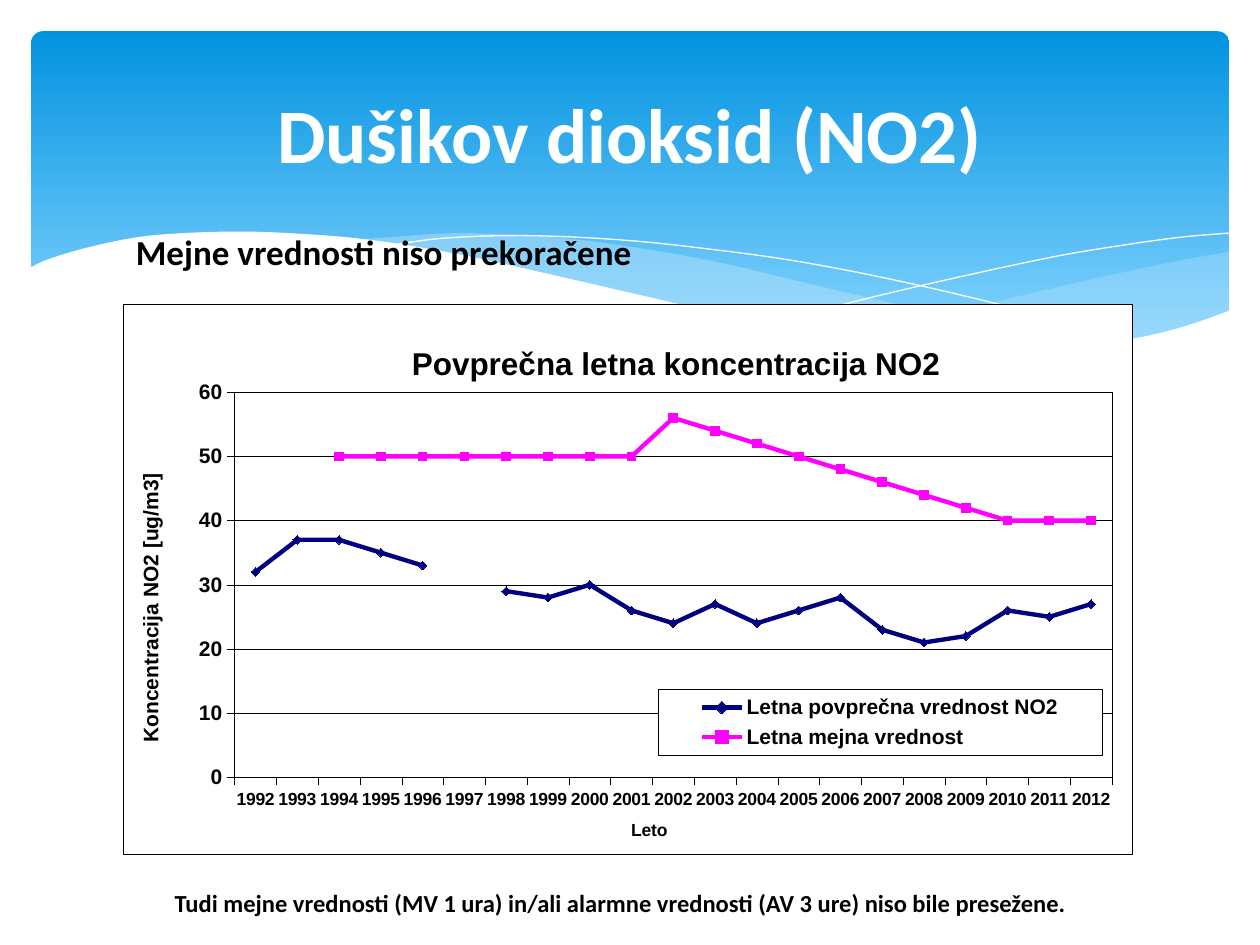
from dataclasses import dataclass

from lxml import etree
from pptx import Presentation
from pptx.chart.data import CategoryChartData
from pptx.dml.color import RGBColor
from pptx.enum.chart import XL_CHART_TYPE, XL_LEGEND_POSITION, XL_MARKER_STYLE, XL_TICK_MARK
from pptx.enum.shapes import MSO_SHAPE
from pptx.enum.text import MSO_ANCHOR, MSO_AUTO_SIZE, PP_ALIGN
from pptx.oxml import parse_xml
from pptx.oxml.ns import nsdecls, qn
from pptx.util import Cm, Pt

LINE_MARKERS = XL_CHART_TYPE.LINE_MARKERS
LEGEND_RIGHT = XL_LEGEND_POSITION.RIGHT
DIAMOND, SQUARE = XL_MARKER_STYLE.DIAMOND, XL_MARKER_STYLE.SQUARE
TICK_OUT = XL_TICK_MARK.OUTSIDE
ROUNDED = MSO_SHAPE.ROUNDED_RECTANGLE
MIDDLE = MSO_ANCHOR.MIDDLE
GROW = MSO_AUTO_SIZE.SHAPE_TO_FIT_TEXT
LEFT, CENTER = PP_ALIGN.LEFT, PP_ALIGN.CENTER
TITLE_ONLY = 5


@dataclass(frozen=True)
class Theme:
    black: str = "000000"
    white: str = "FFFFFF"
    sky_top: str = "0293E0"
    sky_bottom: str = "83D3FE"
    mist: str = "C6E7FC"
    navy: str = "000080"
    magenta: str = "FF00FF"
    text_font: str = "Calibri"
    chart_font: str = "Arial"
    title: float = 44
    lead: float = 20
    note: float = 14
    chart_title: float = 18
    chart_text: float = 12
    chart_small: float = 10
    hairline: float = 0.25
    series_line: float = 2.5


THEME = Theme()

# Wave anchors in centimetres
RIGHT_WAVE = [(24.78, 5.08), (23.75, 5.26), (21.87, 5.66), (19.79, 6.15), (17.93, 6.53),
              (16.79, 6.73), (17.91, 6.88), (19.23, 7.01), (20.68, 7.06), (21.92, 6.99),
              (22.99, 6.83), (23.93, 6.58), (24.79, 6.27)]
MIDDLE_WAVE = [(22.68, 6.93), (21.26, 6.73), (19.69, 6.45), (17.93, 6.1), (15.98, 5.64),
               (14.45, 5.28), (13.06, 5.03), (11.81, 4.85), (10.67, 4.75), (9.17, 4.7),
               (7.95, 4.78), (7.26, 4.85), (8.69, 5.05), (10.26, 5.36), (11.4, 5.64),
               (13.46, 6.1), (15.27, 6.48), (16.89, 6.76), (18.34, 6.96), (19.94, 7.06),
               (21.29, 7.06), (22.68, 6.93)]
FALLING_LINE = [(7.85, 4.95), (8.97, 4.8), (10.57, 4.75), (12.42, 4.83), (14.12, 5),
                (16.15, 5.28), (18.47, 5.74), (21.11, 6.38), (23.04, 6.91)]
RISING_LINE = [(15.57, 6.53), (17.07, 6.12), (19, 5.66), (21.23, 5.18), (22.73, 4.93),
               (23.83, 4.78), (24.77, 4.7)]
WHITE_WAVE = [(24.82, 6.25), (23.88, 6.58), (22.83, 6.83), (21.59, 6.99), (20.55, 7.04),
              (18.9, 6.96), (16.97, 6.73), (14.71, 6.35), (12.78, 5.92), (11.35, 5.59),
              (9.27, 5.13), (7.42, 4.83), (5.84, 4.7), (4.5, 4.67), (3.02, 4.75),
              (1.93, 4.95), (1.02, 5.21), (0.58, 5.41)]
WHITE_CORNERS = [(0.58, 8.36), (24.82, 8.36)]

YEARS = [str(year) for year in range(1992, 2013)]
MEASURED = [32, 37, 37, 35, 33, None, 29, 28, 30, 26, 24, 27, 24, 26, 28, 23, 21, 22, 26, 25, 27]
LIMITS = [None] * 2 + [50] * 8 + list(range(56, 40, -2)) + [40] * 3


def color(value):
    return RGBColor.from_string(value)


def set_font(font, value, size, name):
    for attribute, setting in {"name": name, "size": Pt(size), "bold": True}.items():
        setattr(font, attribute, setting)
    font.color.rgb = color(value)


def set_line(line, value, width):
    line.color.rgb = color(value)
    line.width = Pt(width)


def smooth_curve(anchors, steps=4):
    """Catmull-Rom curve through the anchors."""
    padded = [anchors[0], *anchors, anchors[-1]]
    points = [anchors[0]]
    for a, b, c, d in zip(padded, padded[1:], padded[2:], padded[3:]):
        for step in range(1, steps + 1):
            t = step / steps
            points.append(tuple(
                q + t / 2 * (r - p + t * (2 * p - 5 * q + 4 * r - s + t * (3 * (q - r) + s - p)))
                for p, q, r, s in zip(a, b, c, d)))
    return points


def add_wave(slide, anchors, corners=(), fill=None, opacity=100):
    points = [(Cm(x), Cm(y)) for x, y in [*smooth_curve(anchors), *corners]]
    builder = slide.shapes.build_freeform(*points[0])
    builder.add_line_segments(points[1:], close=fill is not None)
    shape = builder.convert_to_shape()
    shape.shadow.inherit = False
    if fill is None:
        shape.fill.background()
        set_line(shape.line, THEME.white, 0)
        return
    shape.line.fill.background()
    shape.fill.solid()
    shape.fill.fore_color.rgb = color(fill)
    if opacity < 100:
        rgb = shape.fill._xPr.find(".//" + qn("a:srgbClr"))
        etree.SubElement(rgb, qn("a:alpha"), val=str(opacity * 1000))


def add_backdrop(slide):
    panel = slide.shapes.add_shape(ROUNDED, Cm(0.63), Cm(0.63), Cm(24.15), Cm(6.86))
    panel.adjustments[0] = 0.034
    panel.shadow.inherit = False
    panel.line.fill.background()
    panel.fill.gradient()
    panel.fill.gradient_angle = 270
    stops = [(0, THEME.sky_top), (0.9, THEME.sky_bottom)]
    for stop, (position, value) in zip(panel.fill.gradient_stops, stops):
        stop.position = position
        stop.color.rgb = color(value)
    add_wave(slide, RIGHT_WAVE, fill=THEME.mist, opacity=29)
    add_wave(slide, MIDDLE_WAVE, fill=THEME.mist, opacity=40)
    add_wave(slide, FALLING_LINE)
    add_wave(slide, RISING_LINE)
    add_wave(slide, WHITE_WAVE, WHITE_CORNERS, fill=THEME.white)


def write_text(shape, text, value, size, alignment, **frame_format):
    for attribute, setting in {"word_wrap": True, **frame_format}.items():
        setattr(shape.text_frame, attribute, setting)
    paragraph = shape.text_frame.paragraphs[0]
    paragraph.alignment = alignment
    run = paragraph.add_run()
    run.text = text
    set_font(run.font, value, size, THEME.text_font)


def place_title(slide, text):
    title = slide.shapes.title
    box = {"left": Cm(1.27), "top": Cm(0.94), "width": Cm(22.86), "height": Cm(3.48)}
    for attribute, setting in box.items():
        setattr(title, attribute, setting)
    write_text(title, text, THEME.white, THEME.title, CENTER, vertical_anchor=MIDDLE)
    slide.shapes.element.append(title.element)  # in front of the backdrop


def add_text(slide, text, box, size, alignment):
    shape = slide.shapes.add_textbox(*map(Cm, box))
    write_text(shape, text, THEME.black, size, alignment, auto_size=GROW)


def set_layout(parent, after, x, y, width=None, height=None, inner=False):
    """Place a chart part by fractions of the chart area."""
    for old in parent.findall(qn("c:layout")):
        parent.remove(old)
    layout = etree.Element(qn("c:layout"))
    manual = etree.SubElement(layout, qn("c:manualLayout"))
    values = {"layoutTarget": "inner" if inner else None, "xMode": "edge", "yMode": "edge",
              "x": x, "y": y, "w": width, "h": height}
    for tag, value in values.items():
        if value is not None:
            etree.SubElement(manual, qn("c:" + tag), val=str(value))
    parent.insert(0 if after is None else parent.index(parent.find(qn(after))) + 1, layout)


def boxed_area():
    return parse_xml(
        f'<c:spPr {nsdecls("c", "a")}><a:solidFill><a:srgbClr val="{THEME.white}"/></a:solidFill>'
        f'<a:ln w="{Pt(THEME.hairline)}"><a:solidFill><a:srgbClr val="{THEME.black}"/>'
        '</a:solidFill></a:ln></c:spPr>')


def write_chart_title(title, text, size):
    title.text_frame.text = text
    set_font(title.text_frame.paragraphs[0].runs[0].font, THEME.black, size, THEME.chart_font)


def format_axis(axis, text, size):
    axis.major_tick_mark = TICK_OUT
    set_line(axis.format.line, THEME.black, THEME.hairline)
    set_font(axis.tick_labels.font, THEME.black, size, THEME.chart_font)
    write_chart_title(axis.axis_title, text, size)


def add_line_chart(slide):
    data = CategoryChartData()
    data.categories = YEARS
    data.add_series("Letna povprečna vrednost NO2", MEASURED)
    data.add_series("Letna mejna vrednost", LIMITS)
    box = map(Cm, (2.49, 6.13, 20.34, 11.1))
    chart = slide.shapes.add_chart(LINE_MARKERS, *box, data).chart
    set_font(chart.font, THEME.black, THEME.chart_small, THEME.chart_font)
    write_chart_title(chart.chart_title, "Povprečna letna koncentracija NO2", THEME.chart_title)

    # Axes
    format_axis(chart.category_axis, "Leto", THEME.chart_small)
    value_axis = chart.value_axis
    format_axis(value_axis, "Koncentracija NO2 [ug/m3]", THEME.chart_text)
    limits = {"minimum_scale": 0, "maximum_scale": 60, "major_unit": 10}
    for attribute, setting in limits.items():
        setattr(value_axis, attribute, setting)
    set_line(value_axis.major_gridlines.format.line, THEME.black, THEME.hairline)

    # Series
    chart.plots[0].vary_by_categories = False
    styles = [(THEME.navy, DIAMOND), (THEME.magenta, SQUARE)]
    for series, (value, marker) in zip(chart.plots[0].series, styles):
        series.smooth = False
        set_line(series.format.line, value, THEME.series_line)
        series.marker.style = marker
        series.marker.size = 5
        series.marker.format.fill.solid()
        series.marker.format.fill.fore_color.rgb = color(value)
        set_line(series.marker.format.line, value, THEME.hairline)

    # Legend
    chart.has_legend = True
    chart.legend.position = LEGEND_RIGHT
    chart.legend.include_in_layout = False
    set_font(chart.legend.font, THEME.black, THEME.chart_text, THEME.chart_font)

    # Placement and frames
    area = chart.element.find(qn("c:chart"))
    plot, legend = area.find(qn("c:plotArea")), area.find(qn("c:legend"))
    set_layout(area.find(qn("c:title")), "c:tx", 0.28, 0.06)
    set_layout(plot.find(qn("c:catAx")).find(qn("c:title")), "c:tx", 0.5, 0.93)
    set_layout(plot.find(qn("c:valAx")).find(qn("c:title")), "c:tx", 0.01, 0.3)
    set_layout(plot, None, 0.11, 0.16, 0.87, 0.7, inner=True)
    set_layout(legend, "c:legendPos", 0.53, 0.7, 0.44, 0.12)
    area.addnext(boxed_area())
    plot.append(boxed_area())
    legend.find(qn("c:txPr")).addprevious(boxed_area())


def main():
    presentation = Presentation()
    presentation.slide_width, presentation.slide_height = Cm(25.4), Cm(19.05)
    slide = presentation.slides.add_slide(presentation.slide_layouts[TITLE_ONLY])
    add_backdrop(slide)
    place_title(slide, "Dušikov dioksid (NO2)")
    add_line_chart(slide)
    add_text(slide, "Tudi mejne vrednosti (MV 1 ura) in/ali alarmne vrednosti (AV 3 ure) "
             "niso bile presežene.", (2.21, 17.78, 20.6, 0.86), THEME.note, CENTER)
    add_text(slide, "Mejne vrednosti niso prekoračene", (2.49, 4.52, 13.21, 1.12),
             THEME.lead, LEFT)
    presentation.save("out.pptx")


if __name__ == "__main__":
    main()
